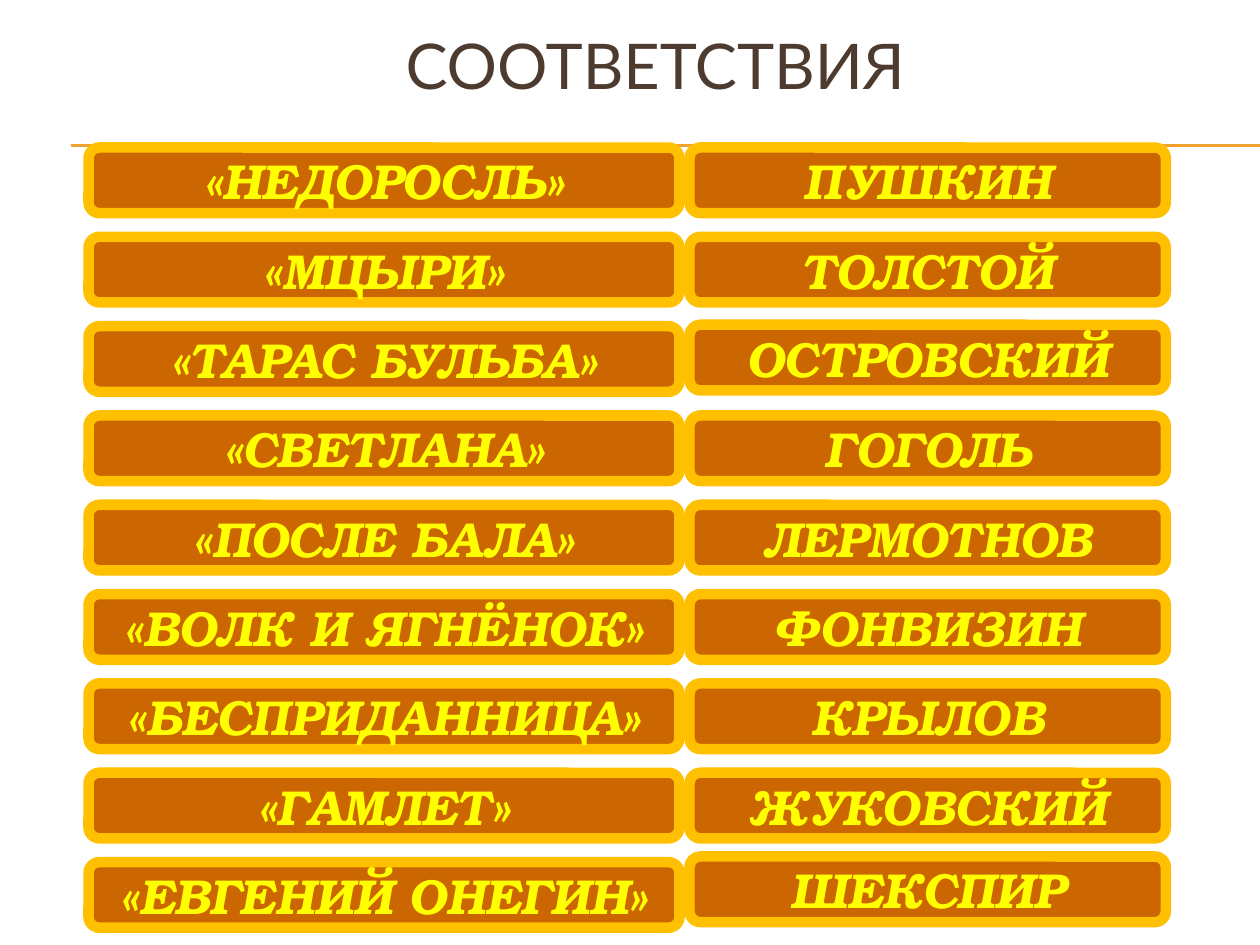
from dataclasses import dataclass

from lxml import etree
from pptx import Presentation
from pptx.dml.color import RGBColor
from pptx.enum.shapes import MSO_CONNECTOR, MSO_SHAPE
from pptx.enum.text import MSO_ANCHOR, PP_ALIGN
from pptx.oxml.ns import qn
from pptx.util import Pt

ROUNDED = MSO_SHAPE.ROUNDED_RECTANGLE
STRAIGHT = MSO_CONNECTOR.STRAIGHT
MIDDLE = MSO_ANCHOR.MIDDLE
CENTER = PP_ALIGN.CENTER


@dataclass(frozen=True)
class Theme:
    title_font: str = "Lato"
    card_font: str = "TeX Gyre Bonum"
    title_size: float = 36
    card_size: float = 28
    title: str = "4E3B30"
    rule: str = "F0A22E"
    card: str = "CC6600"
    card_border: str = "FFC000"
    card_text: str = "FFFF00"
    text_outline: str = "860000"


THEME = Theme()
WORKS = ["«НЕДОРОСЛЬ»", "«МЦЫРИ»", "«ТАРАС БУЛЬБА»", "«СВЕТЛАНА»",
         "«ПОСЛЕ БАЛА»", "«ВОЛК И ЯГНЁНОК»", "«БЕСПРИДАННИЦА»",
         "«ГАМЛЕТ»", "«ЕВГЕНИЙ ОНЕГИН»"]
AUTHORS = ["ПУШКИН", "ТОЛСТОЙ", "ОСТРОВСКИЙ", "ГОГОЛЬ", "ЛЕРМОТНОВ",
           "ФОНВИЗИН", "КРЫЛОВ", "ЖУКОВСКИЙ", "ШЕКСПИР"]
CARD_HEIGHT = 37.5
ROW_PITCH = 51.04


def rgb(value):
    return RGBColor.from_string(value)


def add_run(p, text, font, size, color):
    r = p.add_run()
    r.text = text
    r.font.name = font
    r.font.size = Pt(size)
    r.font.color.rgb = rgb(color)
    return r


def outline_text(r, color, width):
    """Put a solid outline around the letters of a run."""
    ln = etree.Element(qn("a:ln"), w=str(Pt(width)))
    fill = etree.SubElement(ln, qn("a:solidFill"))
    etree.SubElement(fill, qn("a:srgbClr"), val=color)
    r.font._element.insert(0, ln)


def add_rules(s, left, top, width):
    """Double hairline under the title."""
    for y in (top, top + 0.72):
        line = s.shapes.add_connector(
            STRAIGHT, Pt(left), Pt(y), Pt(left + width), Pt(y))
        line.line.color.rgb = rgb(THEME.rule)
        line.line.width = Pt(0.75)
        etree.SubElement(line._element.spPr, qn("a:effectLst"))


def add_title(s, text, left, top, width, height, indent):
    sp = s.shapes.add_textbox(Pt(left), Pt(top), Pt(width), Pt(height))
    tf = sp.text_frame
    tf.word_wrap = True
    tf.vertical_anchor = MIDDLE
    tf.margin_left = Pt(indent)
    add_run(tf.paragraphs[0], text, THEME.title_font, THEME.title_size,
            THEME.title)


def add_card(s, text, left, top, width, height):
    sp = s.shapes.add_shape(ROUNDED, Pt(left), Pt(top), Pt(width), Pt(height))
    sp.shadow.inherit = False
    sp.fill.solid()
    sp.fill.fore_color.rgb = rgb(THEME.card)
    sp.line.color.rgb = rgb(THEME.card_border)
    sp.line.width = Pt(6)
    tf = sp.text_frame
    tf.word_wrap = True
    tf.vertical_anchor = MIDDLE
    p = tf.paragraphs[0]
    p.alignment = CENTER
    r = add_run(p, text, THEME.card_font, THEME.card_size, THEME.card_text)
    r.font.bold = r.font.italic = True
    outline_text(r, THEME.text_outline, 1)


def add_column(s, labels, left, top, width, shifts=None):
    """Stack cards at an even pitch; shifts moves single rows vertically."""
    shifts = shifts or {}
    for row, label in enumerate(labels):
        y = top + row * ROW_PITCH + shifts.get(row, 0)
        add_card(s, label, left, y, width, CARD_HEIGHT)


def main():
    prs = Presentation()
    prs.slide_width, prs.slide_height = Pt(720), Pt(540)
    s = prs.slides.add_slide(prs.slide_layouts[6])

    # Heading
    add_rules(s, 40.5, 82.8, 679.5)
    add_title(s, "СООТВЕТСТВИЯ", 23.76, 0, 684, 73.5, indent=208)

    # Works on the left, authors on the right
    add_column(s, WORKS, 50.6, 84.3, 337.7)
    add_column(s, AUTHORS, 394, 84.3, 272.2, shifts={2: -0.8, 8: -3.2})

    prs.save("out.pptx")


if __name__ == "__main__":
    main()
